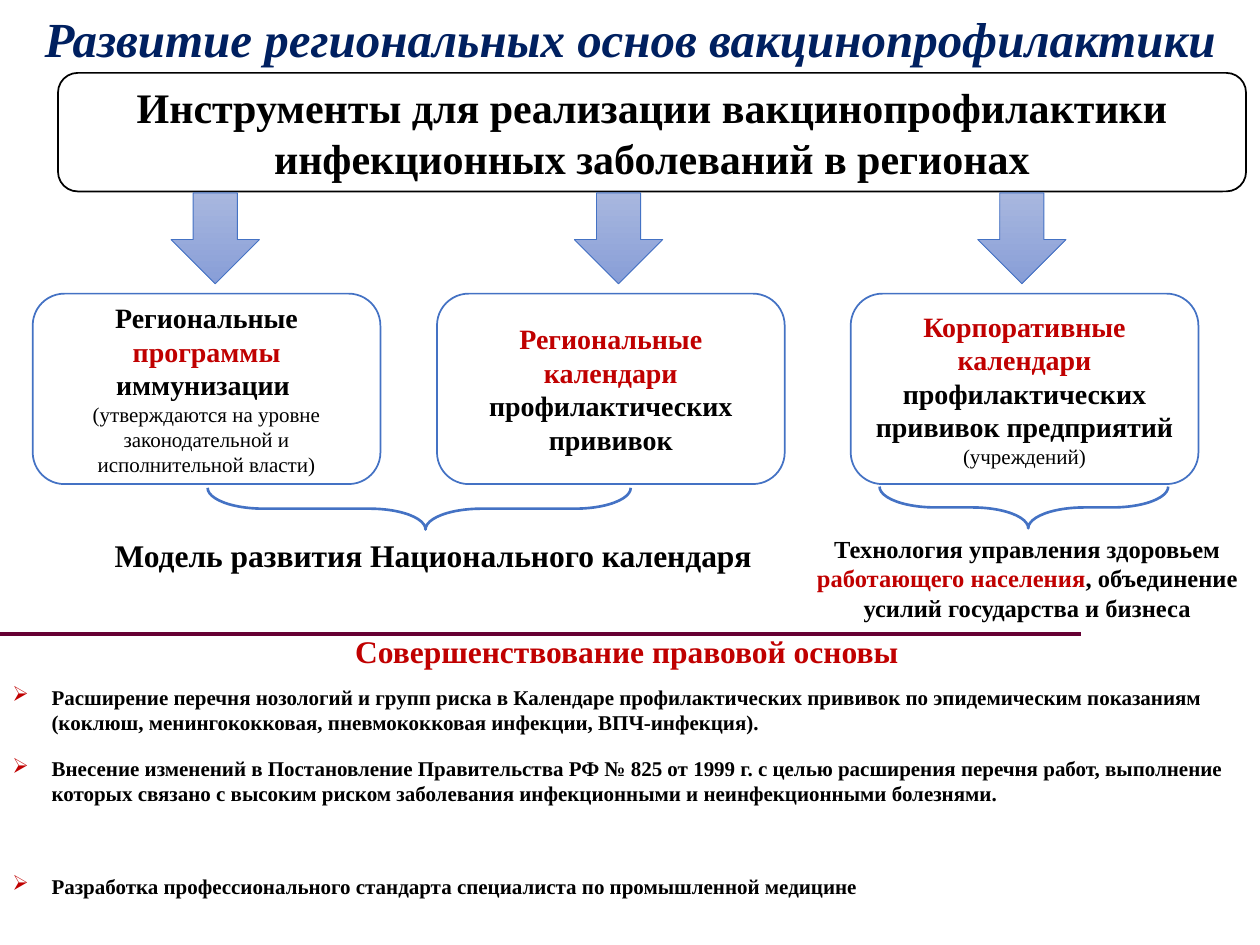
from lxml.etree import SubElement
from pptx import Presentation
from pptx.dml.color import RGBColor
from pptx.enum.shapes import MSO_CONNECTOR, MSO_SHAPE
from pptx.enum.text import MSO_ANCHOR, MSO_AUTO_SIZE, PP_ALIGN
from pptx.oxml.ns import qn
from pptx.util import Cm, Pt

FONT = "Times New Roman"
HUES = {
    "navy": "002060", "black": "000000", "white": "FFFFFF", "red": "C00000",
    "blue": "4472C4", "plum": "660033", "light": "A8B7DF", "deep": "889ED7",
}

# Content: a paragraph is a list of runs (text, size, colour, style)
TITLE = [[("Развитие региональных основ вакцинопрофилактики", 28, "navy", "bi")]]
TOOLS = [[("Инструменты для реализации вакцинопрофилактики "
           "инфекционных заболеваний в регионах", 24, "black", "b")]]
CARDS = [
    (0.66, [[("Региональные ", 16, "black", "b"),
             ("программы", 16, "red", "b"),
             (" иммунизации ", 16, "black", "b")],
            [("(утверждаются на уровне законодательной и исполнительной власти)",
              12, "black", "")]]),
    (8.81, [[("Региональные календари ", 16, "red", "b"),
             ("профилактических прививок", 16, "black", "b")]]),
    (17.15, [[("Корпоративные календари ", 16, "red", "b"),
              ("профилактических прививок предприятий ", 16, "black", "b"),
              ("(учреждений)", 12, "black", "")]]),
]
MODEL = [[("Модель развития Национального календаря", 18, "black", "b")]]
HEALTH = [[("Технология управления здоровьем ", 14, "black", "b"),
           ("работающего населения", 14, "red", "b"),
           (", объединение усилий государства и бизнеса", 14, "black", "b")]]
LEGAL = [[("Совершенствование правовой основы", 18, "red", "b")]]
# Each step: space before in points, text
STEPS = [
    (6, "Расширение перечня нозологий и групп риска в Календаре "
        "профилактических прививок по эпидемическим показаниям (коклюш, "
        "менингококковая, пневмококковая инфекции, ВПЧ-инфекция)."),
    (6, "Внесение изменений в Постановление Правительства РФ № 825 от 1999 г. "
        "с целью расширения перечня работ, выполнение которых связано с высоким "
        "риском заболевания инфекционными и неинфекционными болезнями."),
    (32.3, "Разработка профессионального стандарта специалиста "
           "по промышленной медицине"),
]
BRACES = [(8.03, 5.99, 0.84, 8.53), (20.22, 7.32, 0.84, 5.82)]

deck = Presentation()
deck.slide_width, deck.slide_height = Cm(25.4), Cm(19.05)
slide = deck.slides.add_slide(deck.slide_layouts[6])
shapes = slide.shapes


def hue(name):
    return RGBColor.from_string(HUES[name])


def write(frame, paras, align):
    for i, runs in enumerate(paras):
        para = frame.paragraphs[0] if i == 0 else frame.add_paragraph()
        para.alignment = align
        for text, size, tint, style in runs:
            run = para.add_run()
            run.text = text
            font = run.font
            font.name, font.size = FONT, Pt(size)
            font.bold, font.italic = "b" in style, "i" in style
            font.color.rgb = hue(tint)


def label(box, paras, align=PP_ALIGN.CENTER, wrap=True):
    frame = shapes.add_textbox(*map(Cm, box)).text_frame
    frame.word_wrap = wrap
    if not wrap:
        frame.auto_size = MSO_AUTO_SIZE.SHAPE_TO_FIT_TEXT
    write(frame, paras, align)
    return frame


def draw(kind, box, tint, width):
    shape = shapes.add_shape(kind, *map(Cm, box))
    shape.shadow.inherit = False
    shape.line.color.rgb = hue(tint)
    shape.line.width = Pt(width)
    return shape


def panel(box, tint, paras):
    shape = draw(MSO_SHAPE.ROUNDED_RECTANGLE, box, tint, 1)
    shape.fill.solid()
    shape.fill.fore_color.rgb = hue("white")
    frame = shape.text_frame
    frame.word_wrap = True
    frame.vertical_anchor = MSO_ANCHOR.MIDDLE
    write(frame, paras, PP_ALIGN.CENTER)


# Title and main panel
frame = label((0, -0.36, 25.4, 2.39), TITLE)
frame.vertical_anchor = MSO_ANCHOR.MIDDLE
frame.paragraphs[0].line_spacing = 0.9
panel((1.17, 1.47, 23.95, 2.39), "black", TOOLS)

# Cards with arrows above them
for i, (left, paras) in enumerate(CARDS):
    panel((left, 5.92, 7.01, 3.84), "blue", paras)
    arrow = draw(MSO_SHAPE.DOWN_ARROW, (3.45 + 8.13 * i, 3.89, 1.78, 1.83),
                 "blue", 0.5)
    arrow.fill.gradient()
    arrow.fill.gradient_angle = 270
    for stop, place, tint in zip(arrow.fill.gradient_stops, (0, 1),
                                 ("light", "deep")):
        stop.position = place
        stop.color.rgb = hue(tint)

# Braces and their captions
for box in BRACES:
    brace = draw(MSO_SHAPE.RIGHT_BRACE, box, "blue", 1.5)
    brace.fill.background()
    brace.rotation = 90
    brace.adjustments[0] = 1.345
    brace.adjustments[1] = 0.485
label((2.06, 10.69, 13.49, 1.02), MODEL, PP_ALIGN.LEFT, wrap=False)
label((16, 10.64, 9.42, 2.06), HEALTH)

# Divider
rule = shapes.add_connector(MSO_CONNECTOR.STRAIGHT, Cm(0), Cm(12.78),
                            Cm(21.79), Cm(12.78))
rule.line.color.rgb = hue("plum")
rule.line.width = Pt(2.25)
SubElement(rule._element.spPr, qn("a:effectLst"))

# Legal steps
label((6.91, 12.62, 11.58, 1.02), LEGAL, PP_ALIGN.LEFT, wrap=False)
frame = label((0, 13.67, 25.4, 5.38),
              [[(text, 12, "black", "b")] for _, text in STEPS], PP_ALIGN.LEFT)
for para, (gap, _) in zip(frame.paragraphs, STEPS):
    para.space_before, para.space_after = Pt(gap), Pt(6)
    props = para._p.get_or_add_pPr()
    props.set("marL", str(Cm(0.79)))
    props.set("indent", str(-Cm(0.79)))
    tint = SubElement(props, qn("a:buClr"))
    SubElement(tint, qn("a:srgbClr"), val=HUES["red"])
    SubElement(props, qn("a:buChar"), char="➢")

deck.save("out.pptx")
